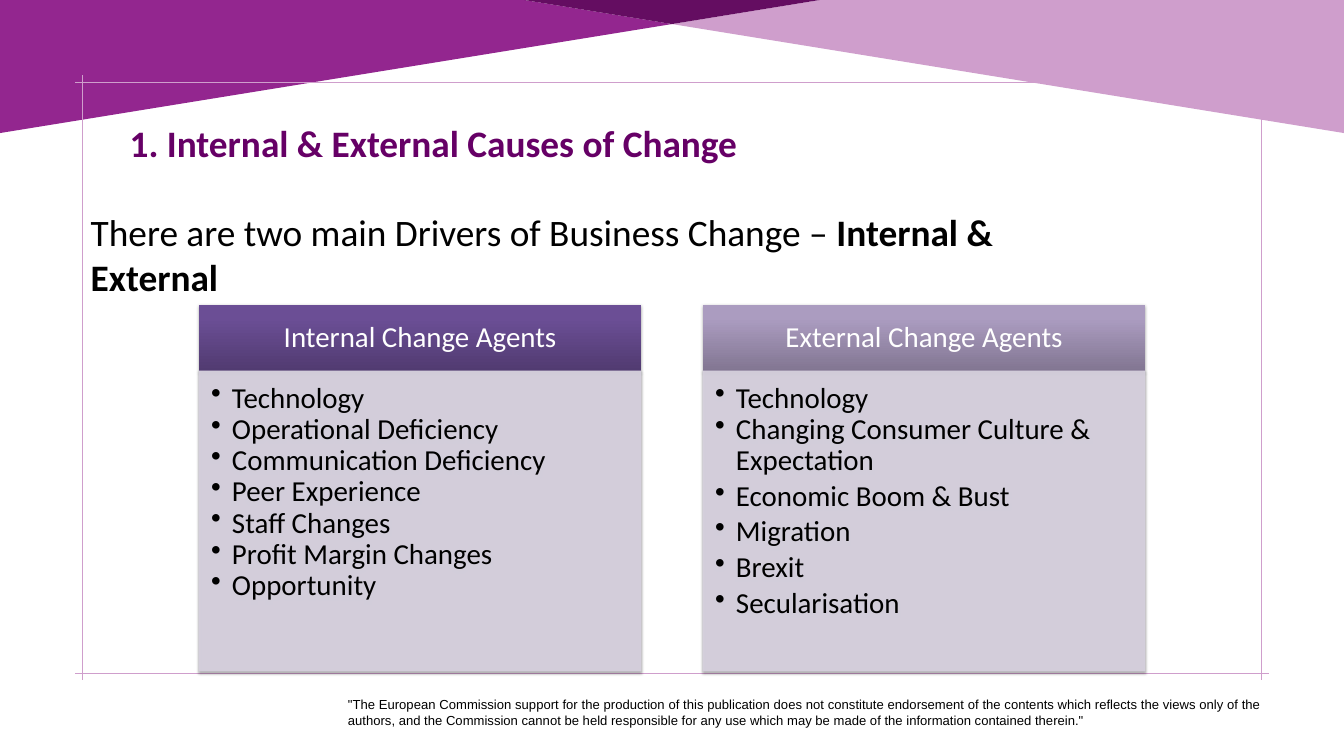
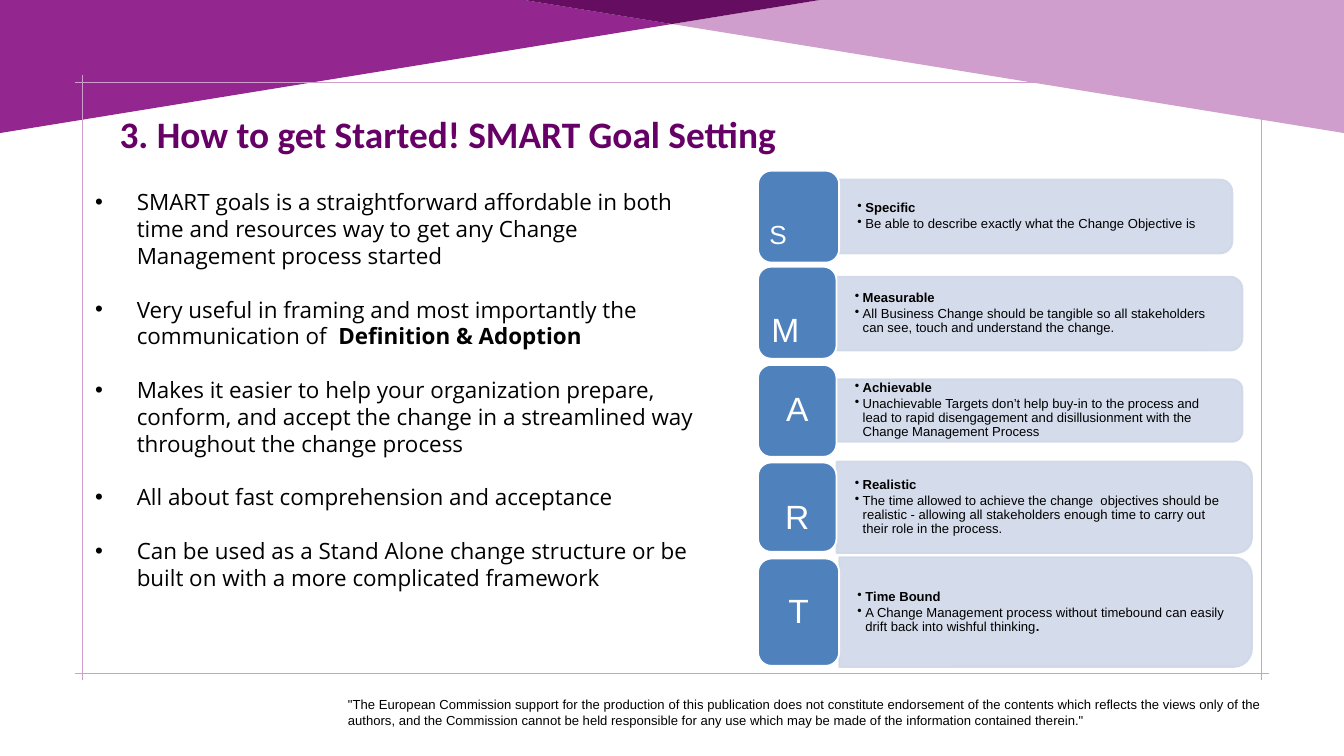
"""Build two slides on business change: its causes and SMART goal setting."""
from dataclasses import dataclass
from typing import NamedTuple

from lxml.etree import SubElement
from pptx import Presentation
from pptx.dml.color import RGBColor
from pptx.enum.shapes import MSO_CONNECTOR, MSO_SHAPE
from pptx.enum.text import MSO_ANCHOR, MSO_AUTO_SIZE, PP_ALIGN
from pptx.oxml.ns import qn
from pptx.util import Cm, Pt


@dataclass(frozen=True)
class Theme:
    purple: str = "93268F"
    pink: str = "CF9ECC"
    plum: str = "640D61"
    title: str = "660066"
    ink: str = "000000"
    white: str = "FFFFFF"
    card: str = "D7D1DF"
    tile: str = "4F81BD"
    bar: str = "D0D8E8"
    heading_font: str = "Calibri"
    list_font: str = "Open Sans"
    small_font: str = "Arial"
    title_size: float = 40
    card_size: float = 31
    list_size: float = 24
    small_size: float = 14
    letter_size: float = 36
    small_letter_size: float = 28


THEME = Theme()


class Box(NamedTuple):
    left: float
    top: float
    width: float
    height: float

    def lengths(self) -> tuple:
        return tuple(Cm(value) for value in self)


class Line(NamedTuple):
    plain: str
    bold: str = ""
    before: float = 0


@dataclass(frozen=True)
class TextStyle:
    font: str
    size: float
    color: str = THEME.ink
    align: PP_ALIGN = PP_ALIGN.LEFT
    spacing: float = 1.0
    after: float = 0
    hang: float = 0


@dataclass(frozen=True)
class Wedge:
    color: str
    corners: tuple


@dataclass(frozen=True)
class Card:
    left: float
    heading: str
    dark: str
    light: str
    agents: tuple


@dataclass(frozen=True)
class Goal:
    letter: str
    tile_top: float
    tile_width: float
    tile_height: float
    bar_top: float
    bar_width: float
    bar_height: float
    lines: tuple
    drop: float = 0
    nudge: float = 0
    size: float = THEME.letter_size


TITLE = TextStyle(THEME.heading_font, THEME.title_size, THEME.title)
INTRO = TextStyle(THEME.heading_font, THEME.title_size)
FOOTER = TextStyle(THEME.small_font, THEME.small_size, align=PP_ALIGN.JUSTIFY, spacing=1.07)
CARD_HEAD = TextStyle(THEME.heading_font, THEME.card_size, THEME.white, PP_ALIGN.CENTER, 0.9)
CARD_LIST = TextStyle(THEME.heading_font, THEME.card_size, spacing=0.9, hang=0.79)
BODY_LIST = TextStyle(THEME.list_font, THEME.list_size, hang=1.57)
GOAL_LIST = TextStyle(THEME.small_font, THEME.small_size, spacing=0.9, after=2.1, hang=0.3)

LEFT_X, RIGHT_X, TOP_Y, BOTTOM_Y, OVERHANG = 3.11, 47.69, 3.11, 25.46, 0.26
CARD_WIDTH, CARD_TOP, HEAD_HEIGHT, LIST_HEIGHT = 16.71, 11.53, 2.49, 11.35
TILE_LEFT = 28.65
LIST_GAP, AGENT_GAP = 28.6, 4.7

WEDGES = (
    Wedge(THEME.purple, ((0, 5.03), (0, 0), (19.81, 0), (25.4, 0.91))),
    Wedge(THEME.pink, ((50.8, 5.03), (25.4, 0.91), (30.99, 0), (50.8, 0))),
    Wedge(THEME.plum, ((25.4, 0.91), (19.81, 0), (30.99, 0))),
)
DISCLAIMER = (
    '"The European Commission support for the production of this publication does not '
    "constitute endorsement of the contents which reflects the views only of the authors, "
    "and the Commission cannot be held responsible for any use which may be made of the "
    'information contained therein."'
)
CARDS = (
    Card(7.52, "Internal Change Agents", "513B71", "6B4E95", (
        Line("Technology"), Line("Operational Deficiency"), Line("Communication Deficiency"),
        Line("Peer Experience"), Line("Staff Changes"), Line("Profit Margin Changes"),
        Line("Opportunity"))),
    Card(26.57, "External Change Agents", "827692", "AB9CC0", (
        Line("Technology"), Line("Changing Consumer Culture & Expectation"),
        Line("Economic Boom & Bust", before=AGENT_GAP), Line("Migration", before=AGENT_GAP),
        Line("Brexit", before=AGENT_GAP), Line("Secularisation", before=AGENT_GAP))),
)
BENEFITS = (
    Line("SMART goals is a straightforward affordable in both time and resources way to get "
         "any Change Management process started"),
    Line("Very useful in framing and most importantly the communication of  ",
         "Definition & Adoption", LIST_GAP),
    Line("Makes it easier to help your organization prepare, conform, and accept the change "
         "in a streamlined way throughout the change process", before=LIST_GAP),
    Line("All about fast comprehension and acceptance", before=LIST_GAP),
    Line("Can be used as a Stand Alone change structure or be built on with a more "
         "complicated framework", before=LIST_GAP),
)
GOALS = (
    Goal("S", 6.45, 3.07, 3.48, 6.79, 14.86, 2.79, (
        Line("", "Specific"),
        Line("Be able to describe exactly what the Change Objective is")),
        drop=1.44, nudge=1.54, size=THEME.small_letter_size),
    Goal("M", 10.08, 2.97, 3.48, 10.46, 15.34, 2.79, (
        Line("", "Measurable"),
        Line("All Business Change should be tangible so all stakeholders can see, touch and "
             "understand the change.")), drop=1.44, nudge=0.9),
    Goal("A", 13.79, 2.97, 3.48, 14.34, 15.34, 2.36, (
        Line("", "Achievable"),
        Line("Unachievable Targets don’t help buy-in to the process and lead to rapid "
             "disengagement and disillusionment with the Change Management Process"))),
    Goal("R", 17.48, 2.97, 3.38, 17.45, 15.7, 3.45, (
        Line("", "Realistic"),
        Line("The time allowed to achieve the change  objectives should be realistic - "
             "allowing all stakeholders enough time to carry out their role in the process.")),
        drop=0.83),
    Goal("T", 21.11, 3.07, 4.06, 21.07, 15.6, 4.14, (
        Line("", "Time Bound"),
        Line("A Change Management process without timebound can easily drift back into "
             "wishful thinking", "."))),
)


def rgb(color: str) -> RGBColor:
    return RGBColor.from_string(color)


def write(frame, lines, style: TextStyle, margins=(0.25, 0.13, 0.25, 0.13),
          anchor=MSO_ANCHOR.TOP) -> None:
    frame.word_wrap = True
    frame.auto_size = MSO_AUTO_SIZE.NONE
    frame.vertical_anchor = anchor
    (frame.margin_left, frame.margin_top,
     frame.margin_right, frame.margin_bottom) = (Cm(margin) for margin in margins)
    for index, line in enumerate(lines):
        paragraph = frame.add_paragraph() if index else frame.paragraphs[0]
        paragraph.text = line.plain
        if line.bold:
            strong = paragraph.add_run()
            strong.text = line.bold
            strong.font.bold = True
        properties = paragraph._p.get_or_add_pPr()
        properties.set("marL", str(Cm(style.hang)))
        properties.set("indent", str(-Cm(style.hang)))
        if style.hang:
            SubElement(properties, qn("a:buChar")).set("char", "•")
        else:
            SubElement(properties, qn("a:buNone"))
        paragraph.alignment = style.align
        paragraph.line_spacing = style.spacing
        paragraph.space_before = Pt(line.before)
        paragraph.space_after = Pt(style.after)
        for run in paragraph.runs:
            run.font.name = style.font
            run.font.size = Pt(style.size)
            run.font.color.rgb = rgb(style.color)


def paint(shape, fill: str, outline: str = "", weight: float = 0, opacity: int = 100) -> None:
    shape.shadow.inherit = False
    shape.fill.solid()
    shape.fill.fore_color.rgb = rgb(fill)
    if outline:
        shape.line.color.rgb = rgb(outline)
        shape.line.width = Pt(weight)
    else:
        shape.line.fill.background()
    if opacity < 100:
        for color in shape.element.spPr.iter(qn("a:srgbClr")):
            SubElement(color, qn("a:alpha")).set("val", str(opacity * 1000))


def cast_shadow(shape) -> None:
    effects = shape.element.spPr.find(qn("a:effectLst"))
    shadow = SubElement(effects, qn("a:outerShdw"), blurRad=str(Pt(3.1)),
                        dist=str(Pt(1.8)), dir="5400000", rotWithShape="0")
    color = SubElement(shadow, qn("a:srgbClr"), val=THEME.ink)
    SubElement(color, qn("a:alpha"), val="35000")


def draw_backdrop(slide) -> None:
    for wedge in WEDGES:
        start, *rest = [(Cm(x), Cm(y)) for x, y in wedge.corners]
        outline = slide.shapes.build_freeform(*start)
        outline.add_line_segments(rest)
        paint(outline.convert_to_shape(), wedge.color)
    rules = [(LEFT_X - OVERHANG, y, RIGHT_X + OVERHANG, y) for y in (TOP_Y, BOTTOM_Y)]
    rules += [(x, TOP_Y - OVERHANG, x, BOTTOM_Y + OVERHANG) for x in (LEFT_X, RIGHT_X)]
    for ends in rules:
        rule = slide.shapes.add_connector(MSO_CONNECTOR.STRAIGHT, *(Cm(end) for end in ends))
        rule.line.color.rgb = rgb(THEME.pink)
        rule.line.width = Pt(0.7)
        SubElement(rule.element.spPr, qn("a:effectLst"))
    footer = slide.shapes.add_textbox(*Box(12.9, 26.14, 35.03, 1.32).lengths())
    write(footer.text_frame, [Line(DISCLAIMER)], FOOTER)


def fill_placeholder(placeholder, box: Box, lines, style: TextStyle) -> None:
    (placeholder.left, placeholder.top,
     placeholder.width, placeholder.height) = box.lengths()
    write(placeholder.text_frame, lines, style)


def start_slide(deck, title: str, title_box: Box, body, body_box: Box, body_style: TextStyle):
    slide = deck.slides.add_slide(deck.slide_layouts[1])
    draw_backdrop(slide)
    fill_placeholder(slide.shapes.title, title_box, [Line("", title)], TITLE)
    fill_placeholder(slide.placeholders[1], body_box, body, body_style)
    return slide


def draw_card(slide, card: Card) -> None:
    head_box = Box(card.left, CARD_TOP, CARD_WIDTH, HEAD_HEIGHT)
    list_box = Box(card.left, CARD_TOP + HEAD_HEIGHT, CARD_WIDTH, LIST_HEIGHT)
    head, agents = (slide.shapes.add_shape(MSO_SHAPE.RECTANGLE, *box.lengths())
                    for box in (head_box, list_box))
    paint(head, card.light)
    head.fill.gradient()
    head.fill.gradient_angle = 90
    for stop, color, position in zip(head.fill.gradient_stops, (card.dark, card.light), (0, 0.8)):
        stop.color.rgb = rgb(color)
        stop.position = position
    paint(agents, THEME.card, THEME.card, 0.75, 90)
    cast_shadow(head)
    cast_shadow(agents)
    write(head.text_frame, [Line(card.heading)], CARD_HEAD,
          (0.61, 0.36, 0.61, 0.36), MSO_ANCHOR.MIDDLE)
    write(agents.text_frame, card.agents, CARD_LIST, (0.46, 0.46, 0.61, 0.69))


def draw_goal(slide, goal: Goal) -> None:
    bar_left = TILE_LEFT + goal.tile_width
    turn = (goal.bar_width - goal.bar_height) / 2
    upright = Box(bar_left + turn, goal.bar_top - turn, goal.bar_height, goal.bar_width)
    bar = slide.shapes.add_shape(MSO_SHAPE.ROUND_2_SAME_RECTANGLE, *upright.lengths())
    bar.rotation = 90
    paint(bar, THEME.bar, THEME.bar, 2, 90)
    text_box = Box(bar_left, goal.bar_top + 0.14, goal.bar_width - 0.15, goal.bar_height - 0.28)
    meaning = slide.shapes.add_textbox(*text_box.lengths())
    write(meaning.text_frame, goal.lines, GOAL_LIST, (0.69, 0, 0.69, 0), MSO_ANCHOR.MIDDLE)
    tile_box = Box(TILE_LEFT, goal.tile_top, goal.tile_width, goal.tile_height)
    tile = slide.shapes.add_shape(MSO_SHAPE.ROUNDED_RECTANGLE, *tile_box.lengths())
    paint(tile, THEME.tile, THEME.white, 2)
    letter_style = TextStyle(THEME.small_font, goal.size, THEME.white, PP_ALIGN.CENTER, 0.9)
    write(tile.text_frame, [Line(goal.letter)], letter_style,
          (0, goal.drop, goal.nudge, 0), MSO_ANCHOR.MIDDLE)


def main() -> None:
    deck = Presentation()
    deck.slide_width = Cm(50.8)
    deck.slide_height = deck.slide_width * 9 // 16
    drivers = Line("There are two main Drivers of Business Change – ", "Internal & External")
    causes = start_slide(deck, "1. Internal & External Causes of Change",
                         Box(4.65, 4.42, 33.66, 1.96),
                         [drivers], Box(3.18, 7.77, 36.63, 4.88), INTRO)
    for card in CARDS:
        draw_card(causes, card)
    smart = start_slide(deck, "3. How to get Started! SMART Goal Setting",
                        Box(4.27, 4.09, 34.29, 1.96),
                        BENEFITS, Box(3.35, 6.99, 23.67, 16.26), BODY_LIST)
    for goal in GOALS:
        draw_goal(smart, goal)
    deck.save("out.pptx")


if __name__ == "__main__":
    main()
